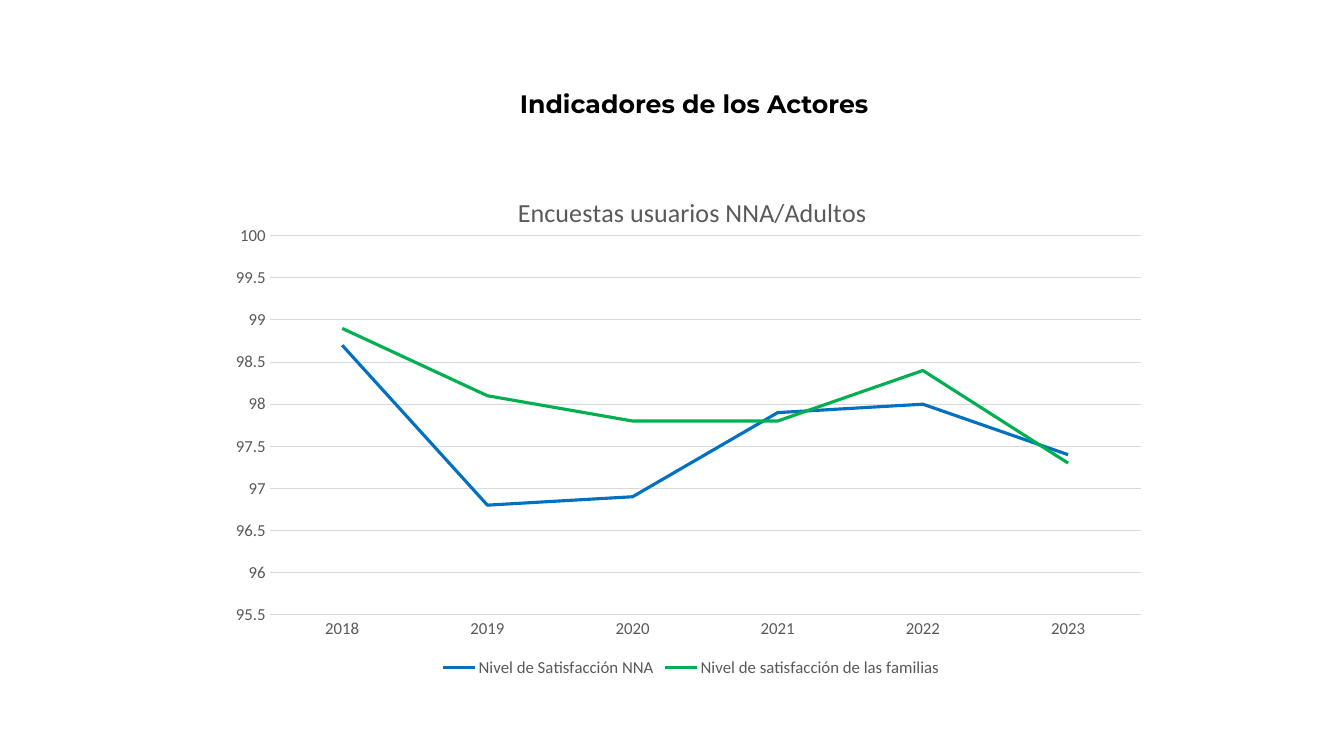
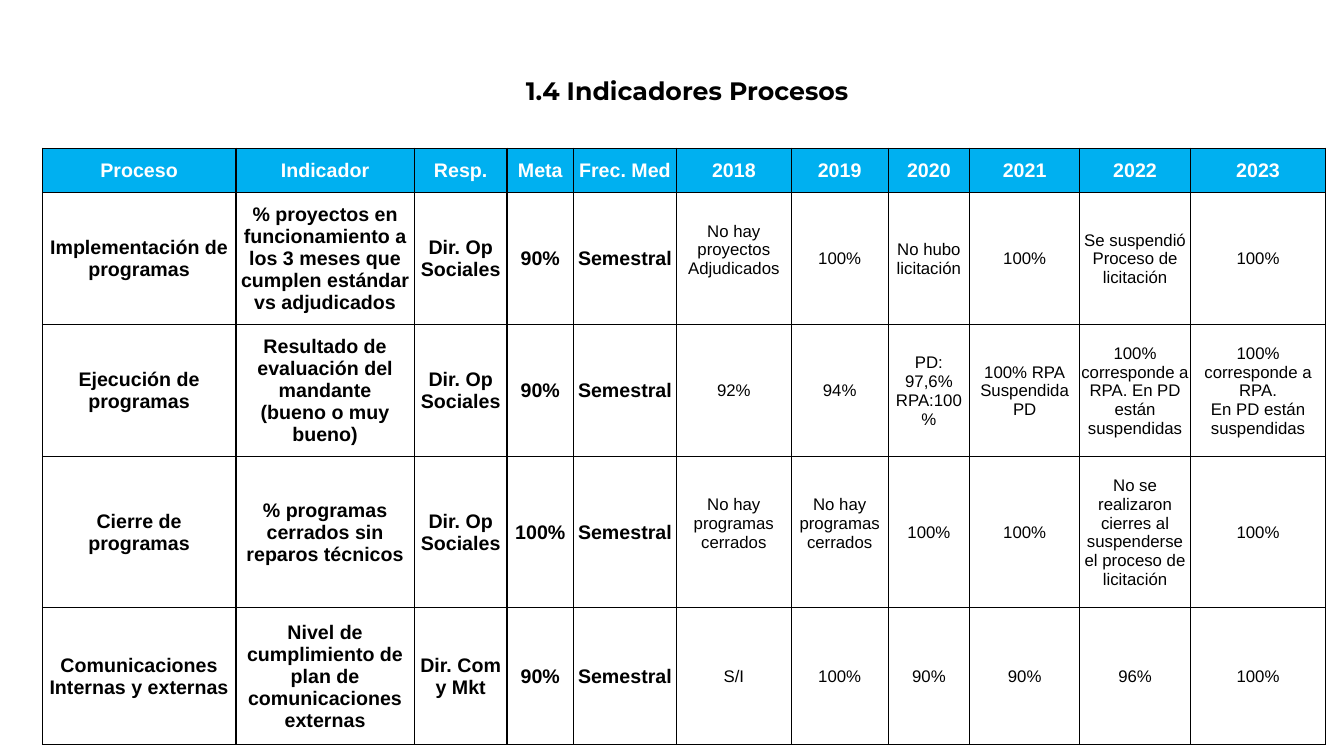
import pptx
import pptx.chart.data
import pptx.dml.color
import pptx.enum.chart
import pptx.enum.text
import pptx.oxml
import pptx.oxml.ns
import pptx.util
from dataclasses import dataclass

Inches = pptx.util.Inches
Pt = pptx.util.Pt
CENTER = pptx.enum.text.PP_ALIGN.CENTER
MIDDLE = pptx.enum.text.MSO_ANCHOR.MIDDLE


@dataclass(frozen=True)
class Theme:
    black: str = "000000"
    white: str = "FFFFFF"
    header: str = "00B0F0"
    muted: str = "595959"
    grid: str = "D9D9D9"
    blue: str = "0070C0"
    green: str = "00B050"
    title_font: str = "Montserrat"
    table_font: str = "Arial"
    chart_font: str = "Calibri"
    title_size: float = 18
    label_size: float = 14
    value_size: float = 12
    chart_title_size: float = 18.6
    border_width: float = 1
    grid_width: float = 0.75
    series_width: float = 2.25


def rgb(color):
    return pptx.dml.color.RGBColor.from_string(color)


def set_values(target, values):
    for name, value in values.items():
        setattr(target, name, value)


def set_font(font, name, size, color, bold=False):
    set_values(font, {"name": name, "size": Pt(size), "bold": bold})
    font.color.rgb = rgb(color)


def set_line(line, color, width):
    line.color.rgb = rgb(color)
    line.width = Pt(width)


def set_layout(parent, position, **values):
    for layout in parent.findall(pptx.oxml.ns.qn("c:layout")):
        parent.remove(layout)
    entries = "".join(f'<c:{key} val="{value}"/>' for key, value in values.items())
    parent.insert(position, pptx.oxml.parse_xml(
        f'<c:layout {pptx.oxml.ns.nsdecls("c")}>'
        f"<c:manualLayout>{entries}</c:manualLayout></c:layout>"))


class Deck:
    def __init__(self, theme):
        self.theme = theme
        self.presentation = pptx.Presentation()
        set_values(self.presentation, {
            "slide_width": Inches(13.33), "slide_height": Inches(7.5)})
        self.slide = None

    def add_slide(self, title, left, top):
        self.slide = self.presentation.slides.add_slide(
            self.presentation.slide_layouts[6])
        box = self.slide.shapes.add_textbox(
            Inches(left), Inches(top), Inches(8.11), Inches(0.81))
        set_values(box.text_frame, {"word_wrap": True, "vertical_anchor": MIDDLE})
        paragraph = box.text_frame.paragraphs[0]
        set_values(paragraph, {"text": title, "alignment": CENTER})
        set_font(paragraph.runs[0].font, self.theme.title_font,
                 self.theme.title_size, self.theme.black, True)

    def add_line_chart(self, title, categories, series_values, colors):
        theme = self.theme
        data = pptx.chart.data.CategoryChartData()
        data.categories = categories
        for name, values in series_values.items():
            data.add_series(name, values)
        chart = self.slide.shapes.add_chart(
            pptx.enum.chart.XL_CHART_TYPE.LINE,
            Inches(2.21), Inches(1.68), Inches(9.29), Inches(5.08), data).chart
        set_font(chart.font, theme.chart_font, theme.value_size, theme.muted)

        chart.has_title = True
        paragraph = chart.chart_title.text_frame.paragraphs[0]
        paragraph.text = title
        set_font(paragraph.runs[0].font, theme.chart_font,
                 theme.chart_title_size, theme.muted)
        chart_space = chart.element
        set_layout(chart_space.xpath("c:chart/c:title")[0], 1,
                   xMode="edge", yMode="edge", x=0.31, y=0.04)
        set_layout(chart_space.xpath("c:chart/c:plotArea")[0], 0,
                   layoutTarget="inner", xMode="edge", yMode="edge",
                   x=0.05, y=0.13, w=0.93, h=0.74)

        chart.has_legend = True
        set_values(chart.legend, {
            "position": pptx.enum.chart.XL_LEGEND_POSITION.BOTTOM,
            "include_in_layout": False})
        for axis in (chart.category_axis, chart.value_axis):
            axis.major_tick_mark = pptx.enum.chart.XL_TICK_MARK.NONE
        set_line(chart.category_axis.format.line, theme.grid, theme.grid_width)
        set_values(chart.value_axis, {
            "minimum_scale": 95.5, "maximum_scale": 100, "major_unit": 0.5})
        chart.value_axis.format.line.fill.background()
        set_line(chart.value_axis.major_gridlines.format.line,
                 theme.grid, theme.grid_width)

        chart.plots[0].vary_by_categories = False
        for series, color in zip(chart.plots[0].series, colors):
            series.smooth = False
            set_line(series.format.line, color, theme.series_width)

    def add_table(self, rows, widths, heights, label_columns, raised_cells):
        theme = self.theme
        table = self.slide.shapes.add_table(
            len(rows), len(widths), Inches(0.42), Inches(1.47),
            Inches(sum(widths)), Inches(sum(heights))).table
        table.horz_banding = False
        for column, width in zip(table.columns, widths):
            column.width = Inches(width)
        for row, height in zip(table.rows, heights):
            row.height = Inches(height)
        for row_index, texts in enumerate(rows):
            for column_index, text in enumerate(texts):
                is_header = row_index == 0
                is_label = is_header or column_index < label_columns
                raised = (row_index, column_index) in raised_cells
                self.fill_cell(
                    table.cell(row_index, column_index), text,
                    theme.header if is_header else theme.white,
                    0.18 if raised else 0,
                    name=theme.table_font,
                    size=theme.label_size if is_label else theme.value_size,
                    color=theme.white if is_header else theme.black,
                    bold=is_label)

    def fill_cell(self, cell, text, fill, bottom, **font):
        set_values(cell, {
            "text": text, "vertical_anchor": MIDDLE,
            "margin_left": Inches(0.01), "margin_right": Inches(0.01),
            "margin_top": Inches(0.01), "margin_bottom": Inches(bottom)})
        self.add_borders(cell)
        cell.fill.solid()
        cell.fill.fore_color.rgb = rgb(fill)
        for paragraph in cell.text_frame.paragraphs:
            paragraph.alignment = CENTER
            for run in paragraph.runs:
                set_font(run.font, **font)

    def add_borders(self, cell):
        properties = cell._tc.get_or_add_tcPr()
        for side in ("lnL", "lnR", "lnT", "lnB"):
            properties.append(pptx.oxml.parse_xml(
                f'<a:{side} {pptx.oxml.ns.nsdecls("a")} '
                f'w="{Pt(self.theme.border_width)}"><a:solidFill>'
                f'<a:srgbClr val="{self.theme.black}"/>'
                f"</a:solidFill></a:{side}>"))


def main():
    theme = Theme()
    deck = Deck(theme)
    years = [str(year) for year in range(2018, 2024)]

    deck.add_slide("Indicadores de los Actores", 2.83, 0.62)
    deck.add_line_chart(
        "Encuestas usuarios NNA/Adultos", years,
        {"Nivel de Satisfacción NNA": [98.7, 96.8, 96.9, 97.9, 98, 97.4],
         "Nivel de satisfacción de las familias":
             [98.9, 98.1, 97.8, 97.8, 98.4, 97.3]},
        [theme.blue, theme.green])

    deck.add_slide("1.4 Indicadores Procesos", 2.76, 0.49)
    rows = [
        ["Proceso", "Indicador", "Resp.", "Meta", "Frec. Med", *years],
        ["Implementación de programas",
         "% proyectos en funcionamiento a los 3 meses que cumplen estándar "
         "vs adjudicados",
         "Dir. Op Sociales", "90%", "Semestral",
         "No hay proyectos Adjudicados", "100%", "No hubo licitación", "100%",
         "Se suspendió Proceso de licitación", "100%"],
        ["Ejecución de programas",
         "Resultado de evaluación del mandante\n(bueno o muy bueno)",
         "Dir. Op Sociales", "90%", "Semestral",
         "92%", "94%", "PD: 97,6%\nRPA:100%", "100% RPA\vSuspendida PD",
         "100% corresponde a RPA. En PD están suspendidas",
         "100% corresponde a RPA.\vEn PD están suspendidas"],
        ["Cierre de programas", "% programas cerrados sin reparos técnicos",
         "Dir. Op Sociales", "100%", "Semestral",
         "No hay programas cerrados", "No hay programas cerrados",
         "100%", "100%",
         "No se realizaron cierres al suspenderse el proceso de licitación",
         "100%"],
        ["Comunicaciones Internas y externas",
         "Nivel de cumplimiento de plan de comunicaciones externas",
         "Dir. Com y Mkt", "90%", "Semestral",
         "S/I", "100%", "90%", "90%", "96%", "100%"],
    ]
    deck.add_table(
        rows,
        widths=[1.92, 1.77, 0.92, 0.66, 1.02, 1.14, 0.96, 0.81, 1.09, 1.1, 1.34],
        heights=[0.44, 1.31, 1.31, 1.5, 1.36],
        label_columns=5,
        raised_cells={(1, 5), (3, 5), (3, 6)})
    deck.presentation.save("out.pptx")


if __name__ == "__main__":
    main()
